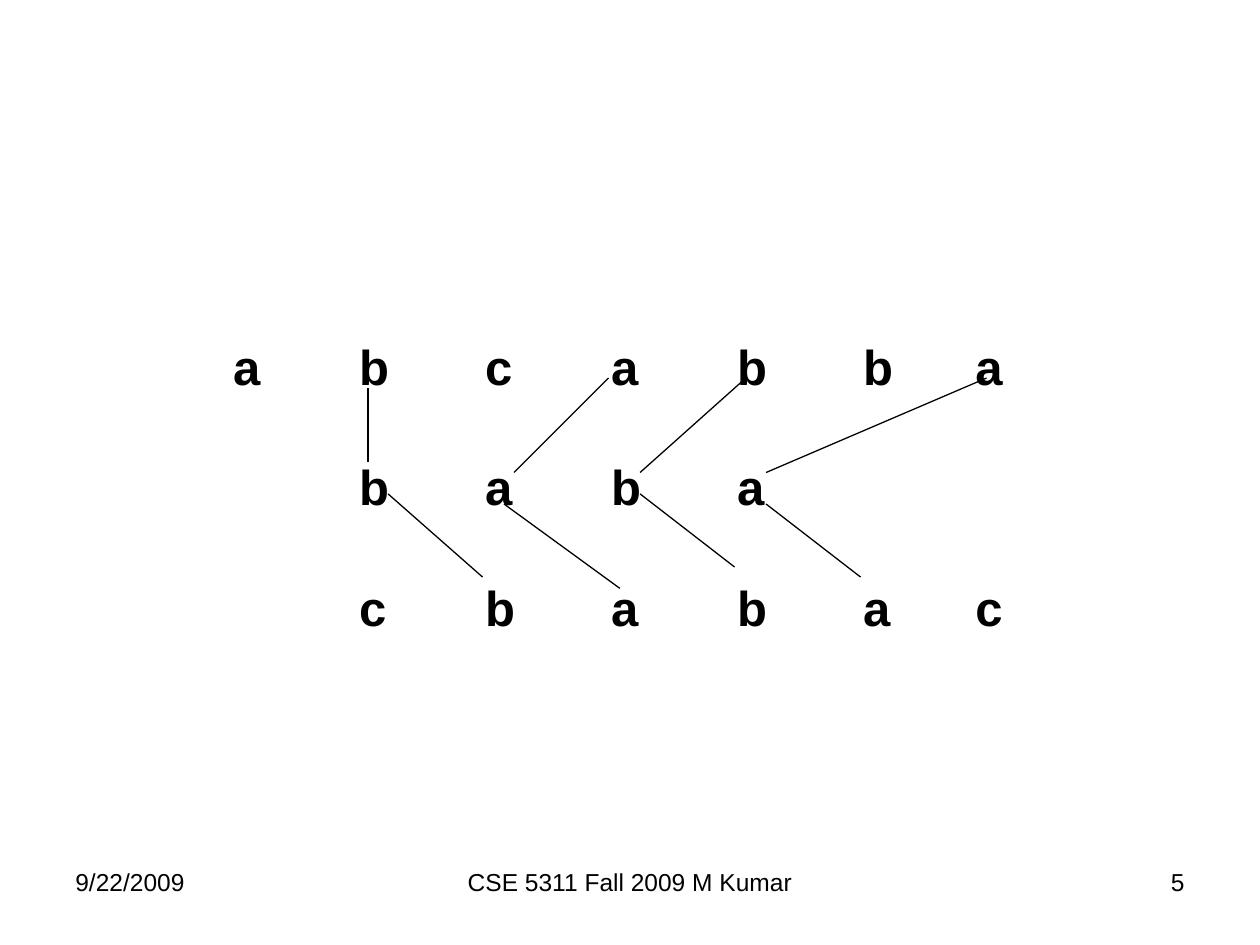
import dataclasses

import lxml.etree
import pptx
import pptx.dml.color
import pptx.enum.shapes
import pptx.enum.text
import pptx.oxml.ns
import pptx.util

Inches = pptx.util.Inches
Align = pptx.enum.text.PP_ALIGN


@dataclasses.dataclass(frozen=True)
class Theme:
    font: str = "Arial"
    ink: pptx.dml.color.RGBColor = pptx.dml.color.RGBColor(0, 0, 0)
    paper: pptx.dml.color.RGBColor = pptx.dml.color.RGBColor(255, 255, 255)
    letter_size: int = 28
    footer_size: int = 14
    line_width: float = 0.75


THEME = Theme()
SEQUENCES = ["a\tb\tc\ta\tb\tb\ta", "\tb\ta\tb\ta", "\tc\tb\ta\tb\ta\tc"]
TAB_STOPS = [1, 2, 3, 4, 5, 5.89]
ROW_GAP = 35.2
MATCHES = [
    ((2.92, 3.08), (2.92, 3.67)),
    ((4.83, 3), (4.08, 3.75)),
    ((5.92, 3), (5.08, 3.75)),
    ((7.83, 3), (6.08, 3.75)),
    ((3.83, 4.58), (3.08, 3.92)),
    ((4.92, 4.67), (4, 4)),
    ((5.83, 4.5), (5.08, 3.92)),
    ((6.83, 4.58), (6.08, 4)),
]


def add_text_box(slide, box):
    shape = slide.shapes.add_textbox(*map(Inches, box))
    shape.text_frame.word_wrap = True
    return shape.text_frame


def add_run(paragraph, text, size, bold=False):
    run = paragraph.add_run()
    run.text = text
    run.font.name = THEME.font
    run.font.size = pptx.util.Pt(size)
    run.font.bold = bold
    run.font.color.rgb = THEME.ink


def set_tab_stops(paragraph, positions):
    properties = paragraph._p.get_or_add_pPr()
    tab_list = lxml.etree.SubElement(properties, pptx.oxml.ns.qn("a:tabLst"))
    for position in positions:
        tab = lxml.etree.SubElement(tab_list, pptx.oxml.ns.qn("a:tab"))
        tab.set("pos", str(Inches(position)))
        tab.set("algn", "l")


def add_sequences(slide, box):
    frame = add_text_box(slide, box)
    frame.margin_left = Inches(1.1)
    frame.margin_top = Inches(0.09)
    for index, sequence in enumerate(SEQUENCES):
        paragraph = frame.add_paragraph() if index else frame.paragraphs[0]
        paragraph.alignment = Align.LEFT
        paragraph.space_before = pptx.util.Pt(ROW_GAP if index else 0)
        set_tab_stops(paragraph, TAB_STOPS)
        add_run(paragraph, sequence, THEME.letter_size, bold=True)


def add_matches(slide):
    for start, end in MATCHES:
        connector = slide.shapes.add_connector(
            pptx.enum.shapes.MSO_CONNECTOR.STRAIGHT, *map(Inches, start + end)
        )
        connector.line.color.rgb = THEME.ink
        connector.line.width = pptx.util.Pt(THEME.line_width)
        lxml.etree.SubElement(
            connector._element.spPr, pptx.oxml.ns.qn("a:effectLst")
        )


def add_footer(slide, box):
    left, top, width, height = box
    side, middle = 2.33, 3.17
    parts = [
        ("9/22/2009", left, side, Align.LEFT),
        ("CSE 5311 Fall 2009 M Kumar", left + (width - middle) / 2, middle, Align.CENTER),
        ("5", left + width - side, side, Align.RIGHT),
    ]
    for text, part_left, part_width, alignment in parts:
        frame = add_text_box(slide, (part_left, top, part_width, height))
        paragraph = frame.paragraphs[0]
        paragraph.alignment = alignment
        add_run(paragraph, text, THEME.footer_size)


def main():
    presentation = pptx.Presentation()
    presentation.slide_width = Inches(10)
    presentation.slide_height = Inches(7.5)
    slide = presentation.slides.add_slide(presentation.slide_layouts[6])
    slide.background.fill.solid()
    slide.background.fill.fore_color.rgb = THEME.paper
    add_footer(slide, (0.5, 6.83, 9, 0.52))
    add_sequences(slide, (0.75, 2.58, 8.08, 3.14))
    add_matches(slide)
    presentation.save("out.pptx")


if __name__ == "__main__":
    main()
